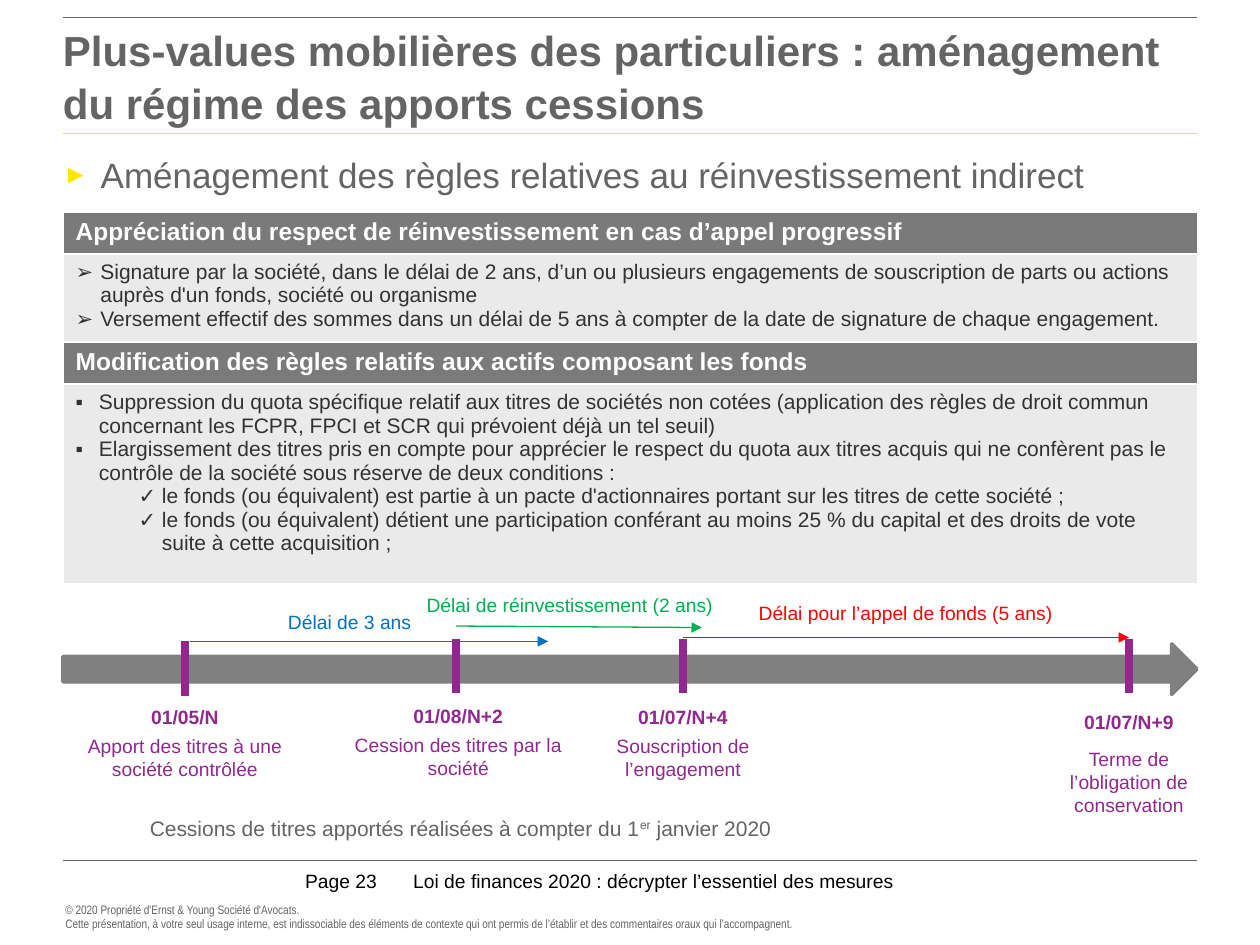
from dataclasses import dataclass

from lxml import etree
from pptx import Presentation
from pptx.dml.color import RGBColor
from pptx.enum.shapes import MSO_CONNECTOR, MSO_SHAPE
from pptx.enum.text import MSO_ANCHOR, PP_ALIGN
from pptx.oxml.ns import qn
from pptx.util import Cm, Pt

STRAIGHT = MSO_CONNECTOR.STRAIGHT
RIGHT_ARROW = MSO_SHAPE.RIGHT_ARROW
TOP, MIDDLE = MSO_ANCHOR.TOP, MSO_ANCHOR.MIDDLE
LEFT, CENTER = PP_ALIGN.LEFT, PP_ALIGN.CENTER


@dataclass(frozen=True)
class Theme:
    font: str = "Arial"
    narrow: str = "Arial Narrow"
    grey: str = "646464"
    yellow: str = "FFE600"
    black: str = "000000"
    white: str = "FFFFFF"
    dark: str = "323232"
    band: str = "7A7A7A"
    panel: str = "EAEAEA"
    axis: str = "808080"
    purple: str = "91278F"
    blue: str = "0070C0"
    green: str = "00B050"
    red: str = "FF0000"
    title: int = 24
    lead: int = 20
    heading: int = 14
    body: int = 12
    label: int = 11
    legal: int = 7


THEME = Theme()
MARGIN, RIGHT_EDGE = 1.27, 24.13

# Heading, then items as (bullet, left indent, hanging, text)
SECTIONS = [
    ("Appréciation du respect de réinvestissement en cas d’appel progressif", [
        ("➢", 0.5, 0.5, "Signature par la société, dans le délai de 2 ans, d’un ou plusieurs engagements de "
         "souscription de parts ou actions auprès d'un fonds, société ou organisme"),
        ("➢", 0.5, 0.5, "Versement effectif des sommes dans un délai de 5 ans à compter de la date de "
         "signature de chaque engagement."),
    ]),
    ("Modification des règles relatifs aux actifs composant les fonds", [
        ("▪", 0.47, 0.47, "Suppression du quota spécifique relatif aux titres de sociétés non cotées "
         "(application des règles de droit commun concernant les FCPR, FPCI et SCR qui prévoient déjà un tel seuil)"),
        ("▪", 0.47, 0.47, "Elargissement des titres pris en compte pour apprécier le respect du quota aux titres "
         "acquis qui ne confèrent pas le contrôle de la société sous réserve de deux conditions :"),
        ("✓", 1.74, 0.47, "le fonds (ou équivalent) est partie à un pacte d'actionnaires portant sur les titres "
         "de cette société ;"),
        ("✓", 1.74, 0.47, "le fonds (ou équivalent) détient une participation conférant au moins 25 % du capital "
         "et des droits de vote suite à cette acquisition ;"),
    ]),
]
ROW_HEIGHTS = [0.79, 1.69, 0.81, 4.03]

# Tick x, tick top, text centre, date, date top, caption, caption top, caption width, caption height
MILESTONES = [
    (3.73, 12.93, 3.73, "01/05/N", 14.1, "Apport des titres à une société contrôlée", 14.68, 5.51, 1.19),
    (9.19, 12.88, 9.24, "01/08/N+2", 14.07, "Cession des titres par la société", 14.66, 5.51, 1.19),
    (13.77, 12.88, 13.77, "01/07/N+4", 14.1, "Souscription de l’engagement", 14.68, 5.51, 1.19),
    (22.76, 12.88, 22.76, "01/07/N+9", 14.2, "Terme de l’obligation de conservation", 14.94, 3.76, 1.68),
]
# Label, colour, label centre, label top, label width, arrow start, arrow end
DELAYS = [
    ("Délai de 3 ans", THEME.blue, 7.05, 12.17, 6.68, (3.84, 12.93), (11.05, 12.93)),
    ("Délai de réinvestissement (2 ans)", THEME.green, 11.49, 11.84, 6.68, (9.19, 12.62), (14.15, 12.65)),
    ("Délai pour l’appel de fonds (5 ans)", THEME.red, 18.26, 11.99, 8.99, (13.77, 12.85), (22.76, 12.85)),
]


def rgb(color):
    return RGBColor.from_string(color)


def assign(target, values):
    for name, value in values.items():
        setattr(target, name, value)


def style_runs(paragraph, size, color, bold=False, font=THEME.font):
    for run in paragraph.runs:
        assign(run.font, {"name": font, "size": Pt(size), "bold": bold})
        run.font.color.rgb = rgb(color)


def add_bullet(paragraph, char, left, hanging, color=None, percent=None):
    properties = paragraph._p.get_or_add_pPr()
    properties.set("marL", str(Cm(left)))
    properties.set("indent", str(-Cm(hanging)))
    if color:
        holder = etree.SubElement(properties, qn("a:buClr"))
        etree.SubElement(holder, qn("a:srgbClr")).set("val", color)
    if percent:
        etree.SubElement(properties, qn("a:buSzPct")).set("val", str(percent * 1000))
    etree.SubElement(properties, qn("a:buFont")).set("typeface", THEME.font)
    etree.SubElement(properties, qn("a:buChar")).set("char", char)


def add_text(slide, box, text, size, color, bold=False, font=THEME.font,
             align=LEFT, anchor=TOP, inset=None):
    """Add a wrapped one-paragraph text box; inset None keeps the default margins."""
    frame = slide.shapes.add_textbox(*map(Cm, box)).text_frame
    assign(frame, {"word_wrap": True, "vertical_anchor": anchor})
    if inset is not None:
        sides = ("margin_left", "margin_top", "margin_right", "margin_bottom")
        assign(frame, dict.fromkeys(sides, Cm(inset)))
    paragraph = frame.paragraphs[0]
    assign(paragraph, {"text": text, "alignment": align})
    style_runs(paragraph, size, color, bold, font)
    return paragraph


def add_centered_label(slide, center, top, width, height, text, color, bold=False):
    add_text(slide, (center - width / 2, top, width, height), text, THEME.label, color, bold, align=CENTER)


def add_line(slide, start, end, color, width, arrow=False):
    connector = slide.shapes.add_connector(STRAIGHT, *map(Cm, (*start, *end)))
    connector.line.color.rgb = rgb(color)
    connector.line.width = Pt(width)
    if arrow:
        etree.SubElement(connector.line._ln, qn("a:tailEnd")).set("type", "triangle")
    etree.SubElement(connector._element.spPr, qn("a:effectLst"))


def format_cell(cell, fill):
    cell.fill.solid()
    cell.fill.fore_color.rgb = rgb(fill)
    properties = cell._tc.get_or_add_tcPr()
    for index, side in enumerate(("a:lnL", "a:lnR", "a:lnT", "a:lnB")):
        border = etree.Element(qn(side), w=str(Pt(1)))
        paint = etree.SubElement(border, qn("a:solidFill"))
        etree.SubElement(paint, qn("a:srgbClr")).set("val", THEME.white)
        properties.insert(index, border)


def add_rules_table(slide):
    box = (MARGIN, 4.27, 22.88, sum(ROW_HEIGHTS))
    table = slide.shapes.add_table(len(ROW_HEIGHTS), 1, *map(Cm, box)).table
    for row, height in zip(table.rows, ROW_HEIGHTS):
        row.height = Cm(height)
    for index, (heading, items) in enumerate(SECTIONS):
        heading_cell, items_cell = table.cell(2 * index, 0), table.cell(2 * index + 1, 0)
        format_cell(heading_cell, THEME.band)
        format_cell(items_cell, THEME.panel)
        heading_cell.text = heading
        style_runs(heading_cell.text_frame.paragraphs[0], THEME.heading, THEME.white, True)
        frame = items_cell.text_frame
        for position, (char, left, hanging, text) in enumerate(items):
            paragraph = frame.add_paragraph() if position else frame.paragraphs[0]
            paragraph.text = text
            add_bullet(paragraph, char, left, hanging)
            style_runs(paragraph, THEME.body, THEME.dark)


def add_timeline(slide):
    axis = slide.shapes.add_shape(RIGHT_ARROW, *map(Cm, (MARGIN, 12.98, 22.86, 1.02)))
    axis.shadow.inherit = False
    axis.fill.solid()
    axis.fill.fore_color.rgb = axis.line.color.rgb = rgb(THEME.axis)
    axis.line.width = Pt(2)
    for tick, tick_top, center, date, date_top, caption, caption_top, width, height in MILESTONES:
        add_line(slide, (tick, tick_top), (tick, tick_top + 1.1), THEME.purple, 4.5)
        add_centered_label(slide, center, date_top, 4.52, 0.74, date, THEME.purple, True)
        add_centered_label(slide, center, caption_top, width, height, caption, THEME.purple)
    for label, color, center, top, width, start, end in DELAYS:
        add_line(slide, start, end, color, 0.75, arrow=True)
        add_centered_label(slide, center, top, width, 0.74, label, color)


def add_effective_date(slide):
    paragraph = add_text(slide, (1.78, 15.49, 16.61, 2.39), "Cessions de titres apportés réalisées à compter du 1",
                         THEME.body, THEME.grey, anchor=MIDDLE)
    paragraph._p.get_or_add_pPr().set("marL", str(Cm(0.99)))
    ordinal = paragraph.add_run()
    ordinal.text = "er"
    paragraph.add_run().text = " janvier 2020"
    style_runs(paragraph, THEME.body, THEME.grey)
    ordinal.font._element.set("baseline", "30000")


def add_frame(slide):
    """Add the ruled lines and the footer."""
    for y, color, width in ((0.36, THEME.grey, 0.5), (2.69, THEME.yellow, 1), (17.35, THEME.grey, 0.25)):
        add_line(slide, (MARGIN, y), (RIGHT_EDGE, y), color, width)
    for left, width, text in ((6.15, 1.85, "Page 23"),
                              (8.33, 11.79, "Loi de finances 2020 : décrypter l’essentiel des mesures")):
        add_text(slide, (left, 17.53, width, 0.56), text, THEME.label, THEME.black, inset=0)
    add_text(slide, (1.07, 18.06, 19.05, 0.86),
             "© 2020 Propriété d'Ernst & Young Société d'Avocats.\n"
             "Cette présentation, à votre seul usage interne, est indissociable des éléments de contexte qui ont "
             "permis de l’établir et des commentaires oraux qui l’accompagnent.",
             THEME.legal, THEME.grey, font=THEME.narrow)


def main():
    deck = Presentation()
    assign(deck, {"slide_width": Cm(25.4), "slide_height": Cm(19.05)})
    slide = deck.slides.add_slide(deck.slide_layouts[6])
    add_frame(slide)
    title = add_text(slide, (MARGIN, 0.43, 22.86, 2.29),
                     "Plus-values mobilières des particuliers : aménagement du régime des apports cessions",
                     THEME.title, THEME.grey, True, inset=0)
    title.line_spacing = 1.06
    lead = add_text(slide, (MARGIN, 3.1, 22.88, 1.1),
                    "Aménagement des règles relatives au réinvestissement indirect", THEME.lead, THEME.grey, inset=0)
    add_bullet(lead, "►", 0.76, 0.76, THEME.yellow, 75)
    add_rules_table(slide)
    add_effective_date(slide)
    add_timeline(slide)
    deck.save("out.pptx")


if __name__ == "__main__":
    main()
